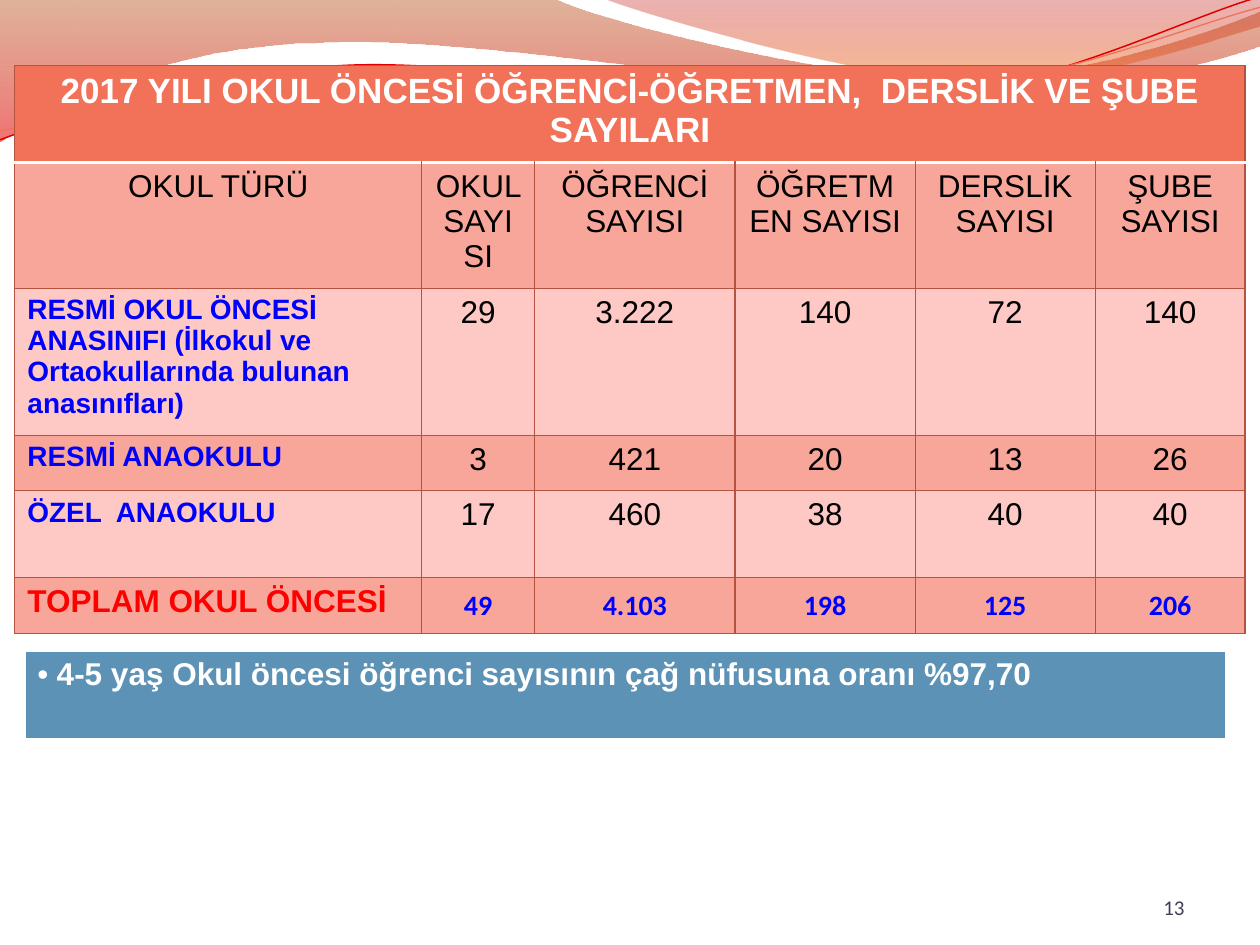
from dataclasses import dataclass

from lxml.etree import SubElement
from pptx import Presentation
from pptx.dml.color import RGBColor
from pptx.enum.text import MSO_ANCHOR, PP_ALIGN
from pptx.oxml.ns import qn
from pptx.util import Cm, Pt


@dataclass(frozen=True)
class Theme:
    body_font: str = "Arial"
    number_font: str = "Calibri"
    title_size: int = 20
    body_size: int = 18
    label_size: int = 16
    page_size: int = 12
    white: str = "FFFFFF"
    black: str = "000000"
    blue: str = "0000FF"
    red: str = "FF0000"
    page_gray: str = "3F4152"
    coral: str = "F17259"
    dark_band: str = "F9A69A"
    light_band: str = "FEC9C5"
    border: str = "B45340"
    note_fill: str = "5C92B5"
    wave_red: str = "E10000"


THEME = Theme()

COLUMN_WIDTHS = [8.2, 2.28, 4.04, 3.63, 3.63, 3.02]
# Minimum heights: rows with wrapped text grow to fit
ROW_HEIGHTS = [1.8, 1.93, 1.5, 1.12, 1.75, 1.12]
TABLE_HEIGHT = 10.06
TITLE = "2017 YILI OKUL ÖNCESİ ÖĞRENCİ-ÖĞRETMEN,  DERSLİK VE ŞUBE SAYILARI"
ROWS = [
    ["OKUL TÜRÜ", "OKUL SAYISI", "ÖĞRENCİ SAYISI", "ÖĞRETMEN SAYISI",
     "DERSLİK SAYISI", "ŞUBE SAYISI"],
    ["RESMİ OKUL ÖNCESİ ANASINIFI (İlkokul ve Ortaokullarında bulunan anasınıfları)",
     "29", "3.222", "140", "72", "140"],
    ["RESMİ ANAOKULU", "3", "421", "20", "13", "26"],
    ["ÖZEL  ANAOKULU", "17", "460", "38", "40", "40"],
    ["TOPLAM OKUL ÖNCESİ", "49", "4.103", "198", "125", "206"],
]
NOTE = "4-5 yaş Okul öncesi öğrenci sayısının çağ nüfusuna oranı %97,70"

# Waves in cm: a start point, then lines (one point) and curves (three points)
LEFT_WAVE = [
    (0, -0.03), [(11.18, -0.03)],
    [(12.09, 0.43), (16.87, 1.6), (19.25, 1.6)],
    [(21.67, 1.6), (24.33, 0.66), (25.4, 0.23)], [(25.43, 0.91)],
    [(24.97, 1.12), (22.1, 1.93), (18.95, 1.9)],
    [(15.8, 1.9), (9.7, 0.71), (6.53, 0.86)],
    [(3.28, 0.89), (1.17, 2.11), (-0.03, 2.87)],
]
RIGHT_WAVE = [
    (12.17, -0.03),
    [(12.93, 0.28), (17.32, 1.57), (19.53, 1.65)],
    [(21.74, 1.75), (24.41, 0.81), (25.4, 0.53)], [(25.4, 0)],
]
# The two lines are tilted after drawing
LINE_ROTATION = 357.3
RED_LINE = [
    (-0.05, 2.22),
    [(1.19, 1.82), (4.02, 1.04), (7.05, 1.05)],
    [(10.05, 1.07), (15.02, 2.37), (18.08, 2.29)],
    [(21.13, 2.2), (23.86, 0.91), (25.4, 0.55)],
]
CORAL_LINE = [
    (-0.04, 2.04),
    [(1.16, 1.9), (4.17, 1.15), (7.2, 1.16)],
    [(10.25, 1.18), (15.13, 2.23), (18.19, 2.16)],
    [(21.21, 2.1), (23.93, 1.06), (25.45, 0.75)],
]


def color(value):
    return RGBColor.from_string(value)


def bend_segments(shape, wave):
    """Turn each run of three straight segments of a curve into one cubic curve."""
    outline = shape.element.spPr.find(".//" + qn("a:path"))
    segments = iter(outline.findall(qn("a:lnTo")))
    for part in wave[1:]:
        first, *others = [next(segments) for _ in part]
        if others:
            curve = outline.makeelement(qn("a:cubicBezTo"))
            first.addprevious(curve)
            for segment in (first, *others):
                curve.append(segment[0])
                outline.remove(segment)


def add_wave(slide, wave, closed):
    points = [wave[0]] + [point for part in wave[1:] for point in part]
    corners = [(Cm(x), Cm(y)) for x, y in points]
    builder = slide.shapes.build_freeform(*corners[0])
    builder.add_line_segments(corners[1:], close=closed)
    shape = builder.convert_to_shape()
    bend_segments(shape, wave)
    shape.shadow.inherit = False
    return shape


def add_gradient_wave(slide, wave, stops):
    shape = add_wave(slide, wave, closed=True)
    shape.line.fill.background()
    shape.fill.gradient()
    shape.fill.gradient_angle = 270
    for stop, (position, value, opacity) in zip(shape.fill.gradient_stops, stops):
        stop.position = position
        stop.color.rgb = color(value)
    # Opacity of each stop
    colors = shape.element.spPr.findall(".//" + qn("a:srgbClr"))
    for element, (position, value, opacity) in zip(colors, stops):
        SubElement(element, qn("a:alpha"), val=str(opacity * 1000))


def add_line_wave(slide, wave, value, width):
    shape = add_wave(slide, wave, closed=False)
    shape.rotation = LINE_ROTATION
    shape.fill.background()
    shape.line.color.rgb = color(value)
    shape.line.width = Pt(width)


def write_text(text_frame, text, size, value, bold=False,
               font=THEME.body_font, align=PP_ALIGN.CENTER):
    text_frame.text = text
    paragraph = text_frame.paragraphs[0]
    paragraph.alignment = align
    run_font = paragraph.runs[0].font
    run_font.name, run_font.size, run_font.bold = font, Pt(size), bold
    run_font.color.rgb = color(value)
    return paragraph


def style_cell(cell, fill, border, **special):
    """Fill a cell and draw its sides; special maps a side to (colour, width)."""
    properties = cell._tc.get_or_add_tcPr()
    for side in "LRTB":
        value, width = special.get(side, border)
        line = SubElement(properties, qn("a:ln" + side), w=str(Pt(width)))
        solid = SubElement(line, qn("a:solidFill"))
        SubElement(solid, qn("a:srgbClr"), val=value)
    cell.fill.solid()
    cell.fill.fore_color.rgb = color(fill)


def add_plain_table(slide, left, top, widths, heights, frame_height):
    frame = slide.shapes.add_table(
        len(heights), len(widths), Cm(left), Cm(top),
        Cm(sum(widths)), Cm(frame_height))
    table = frame.table
    table.first_row = table.horz_banding = False
    for column, width in zip(table.columns, widths):
        column.width = Cm(width)
    for row, height in zip(table.rows, heights):
        row.height = Cm(height)
    frame.height = Cm(frame_height)
    return table


def write_table_cell(cell, text, row, column):
    total = row == len(ROWS)
    if column == 0 and row > 1:
        size = THEME.body_size if total else THEME.label_size
        value = THEME.red if total else THEME.blue
        write_text(cell.text_frame, text, size, value, True, align=PP_ALIGN.LEFT)
    elif total:
        cell.vertical_anchor = MSO_ANCHOR.MIDDLE
        cell.margin_left = cell.margin_right = cell.margin_top = Cm(0.03)
        cell.margin_bottom = 0
        write_text(cell.text_frame, text, THEME.label_size, THEME.blue, True,
                   THEME.number_font)
    else:
        write_text(cell.text_frame, text, THEME.body_size, THEME.black)


def add_school_table(slide):
    table = add_plain_table(slide, 0.3, 1.32, COLUMN_WIDTHS, ROW_HEIGHTS, TABLE_HEIGHT)
    border, divider = (THEME.border, 0.75), (THEME.white, 2)
    title_cell = table.cell(0, 0)
    title_cell.merge(table.cell(0, len(COLUMN_WIDTHS) - 1))
    for column in range(len(COLUMN_WIDTHS)):
        style_cell(table.cell(0, column), THEME.coral, border, B=divider)
    write_text(title_cell.text_frame, TITLE, THEME.title_size, THEME.white, True)
    for row, texts in enumerate(ROWS, start=1):
        fill = THEME.dark_band if row % 2 else THEME.light_band
        special = {"T": divider} if row == 1 else {}
        for column, text in enumerate(texts):
            cell = table.cell(row, column)
            style_cell(cell, fill, border, **special)
            write_table_cell(cell, text, row, column)


def add_note(slide):
    cell = add_plain_table(slide, 0.5, 13.12, [24.2], [1.8], 1.8).cell(0, 0)
    style_cell(cell, THEME.note_fill, (THEME.white, 1), B=(THEME.white, 3))
    paragraph = write_text(cell.text_frame, NOTE, THEME.body_size, THEME.white,
                           True, align=PP_ALIGN.LEFT)
    properties = paragraph._p.get_or_add_pPr()
    properties.set("marL", str(Cm(0.39)))
    properties.set("indent", str(-Cm(0.39)))
    SubElement(properties, qn("a:buFont"), typeface=THEME.body_font)
    SubElement(properties, qn("a:buChar"), char="•")


def add_page_number(slide, number):
    box = slide.shapes.add_textbox(Cm(22.02), Cm(17.65), Cm(2.11), Cm(1.02))
    box.text_frame.word_wrap = True
    box.text_frame.vertical_anchor = MSO_ANCHOR.BOTTOM
    write_text(box.text_frame, number, THEME.page_size, THEME.page_gray,
               font=THEME.number_font, align=PP_ALIGN.RIGHT)


def main():
    presentation = Presentation()
    presentation.slide_width, presentation.slide_height = Cm(25.4), Cm(19.05)
    slide = presentation.slides.add_slide(presentation.slide_layouts[6])

    # Waves along the top
    add_gradient_wave(slide, LEFT_WAVE, [(0, "B9561F", 45), (1, "E70000", 55)])
    add_gradient_wave(slide, RIGHT_WAVE, [(0, "BD0000", 30), (0.8, "EC6215", 45)])
    add_line_wave(slide, RED_LINE, THEME.wave_red, 0.85)
    add_line_wave(slide, CORAL_LINE, THEME.coral, 0.75)

    # Content
    add_page_number(slide, "13")
    add_school_table(slide)
    add_note(slide)

    presentation.save("out.pptx")


if __name__ == "__main__":
    main()
